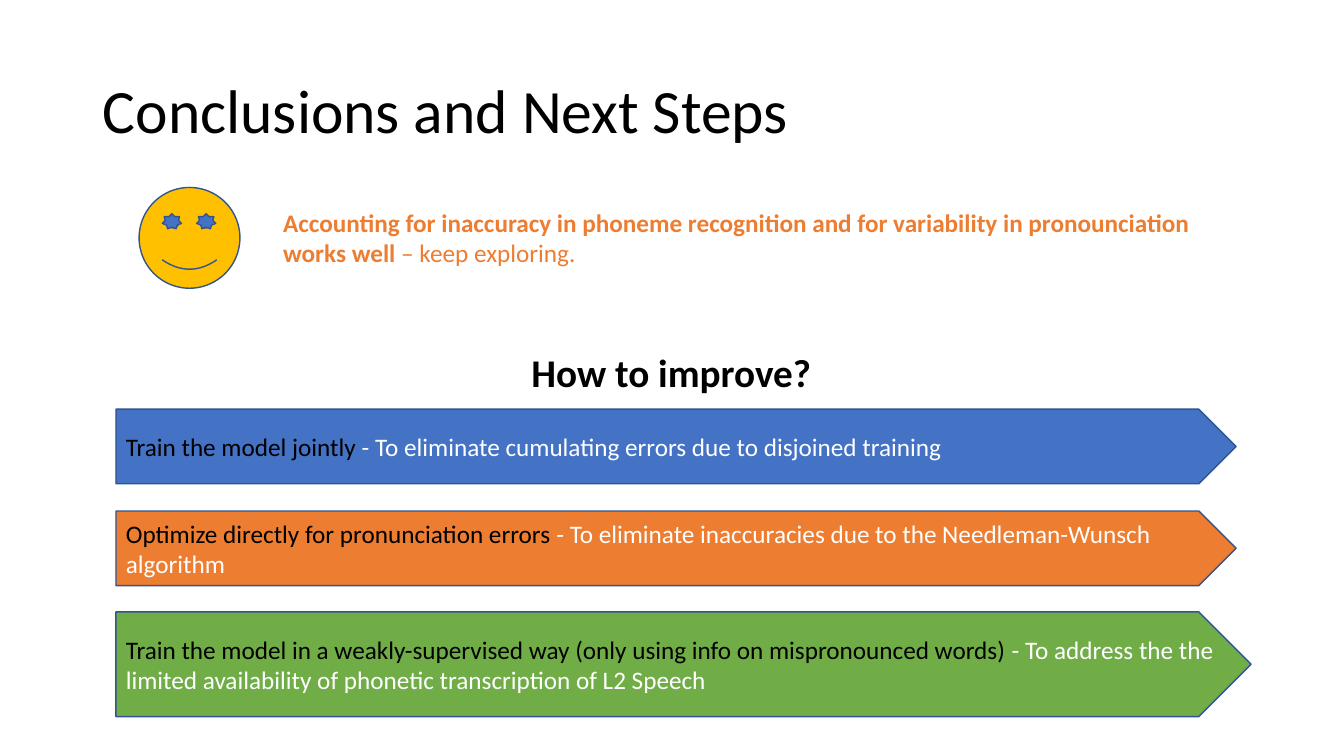
from dataclasses import dataclass

from lxml.etree import SubElement
from pptx import Presentation
from pptx.dml.color import RGBColor as Rgb
from pptx.enum.shapes import MSO_SHAPE as Kind
from pptx.enum.text import MSO_ANCHOR as Anchor, MSO_AUTO_SIZE as Fit, PP_ALIGN as Align
from pptx.oxml.ns import qn
from pptx.shapes.autoshape import Shape
from pptx.slide import Slide
from pptx.text.text import TextFrame
from pptx.util import Inches, Pt


@dataclass(frozen=True)
class Theme:
    font: str = "Calibri"
    title: int = 44
    head: int = 28
    text: int = 18
    black: str = "000000"
    white: str = "FFFFFF"
    blue: str = "4472C4"
    orange: str = "ED7D31"
    green: str = "70AD47"
    gold: str = "FFC000"
    edge: str = "325491"


@dataclass(frozen=True)
class Box:
    left: float
    top: float
    width: float
    height: float

    def place(self) -> tuple:
        return tuple(map(Inches, (self.left, self.top, self.width, self.height)))


@dataclass(frozen=True)
class Step:
    box: Box
    fill: str
    lead: str
    goal: str


THEME = Theme()
STEPS = (
    Step(Box(1.15, 4.06, 11.11, 0.74), THEME.blue,
         "Train the model jointly ",
         "- To eliminate cumulating errors due to disjoined training"),
    Step(Box(1.15, 5.07, 11.11, 0.74), THEME.orange,
         "Optimize directly for pronunciation errors ",
         "- To eliminate inaccuracies due to the Needleman-Wunsch algorithm"),
    Step(Box(1.15, 6.07, 11.26, 1.04), THEME.green,
         "Train the model in a weakly-supervised way "
         "(only using info on mispronounced words) ",
         "- To address the the limited availability of phonetic transcription of L2 Speech"),
)


def write(frame: TextFrame, parts: tuple[str, ...], size: int, color: str,
          anchor: Anchor = Anchor.TOP) -> list:
    """Fill a frame with one left-aligned paragraph and return its runs."""
    frame.word_wrap = True
    frame.auto_size = Fit.NONE
    frame.vertical_anchor = anchor
    para = frame.paragraphs[0]
    para.alignment = Align.LEFT
    para.font.name = THEME.font
    para.font.size = Pt(size)
    para.font.color.rgb = Rgb.from_string(color)
    runs = []
    for part in parts:
        run = para.add_run()
        run.text = part
        runs.append(run)
    return runs


def draw(slide: Slide, kind: Kind, box: Box, fill: str) -> Shape:
    shape = slide.shapes.add_shape(kind, *box.place())
    shape.shadow.inherit = False
    shape.fill.solid()
    shape.fill.fore_color.rgb = Rgb.from_string(fill)
    shape.line.color.rgb = Rgb.from_string(THEME.edge)
    shape.line.width = Pt(1)
    return shape


def seat(shape: Shape, box: Box) -> None:
    shape.left, shape.top, shape.width, shape.height = box.place()


def add_step(slide: Slide, step: Step) -> None:
    shape = draw(slide, Kind.PENTAGON, step.box, step.fill)
    lead, goal = write(shape.text_frame, (step.lead, step.goal),
                       THEME.text, THEME.black, Anchor.MIDDLE)
    lead.font.color.rgb = Rgb.from_string(THEME.black)
    goal.font.color.rgb = Rgb.from_string(THEME.white)


def main() -> None:
    deck = Presentation()
    deck.slide_width, deck.slide_height = Inches(13.33), Inches(7.5)
    slide = deck.slides.add_slide(deck.slide_layouts[1])

    # Title
    title = slide.shapes.title
    seat(title, Box(0.92, 0.4, 11.5, 1.45))
    write(title.text_frame, ("Conclusions and Next Steps",),
          THEME.title, THEME.black, Anchor.MIDDLE)
    title.text_frame.paragraphs[0].line_spacing = 0.9

    # Heading above the steps, without a bullet
    head = slide.placeholders[1]
    seat(head, Box(5.17, 3.46, 3.25, 0.58))
    write(head.text_frame, ("How to improve?",), THEME.head, THEME.black)
    para = head.text_frame.paragraphs[0]
    para.font.bold = True
    para.line_spacing = 0.9
    para.space_before = Pt(10)
    props = para._p.get_or_add_pPr()
    props.set("marL", "0")
    props.set("indent", "0")
    none = SubElement(props, qn("a:buNone"))
    props.find(qn("a:defRPr")).addprevious(none)

    # Smiley with star eyes
    draw(slide, Kind.SMILEY_FACE, Box(1.38, 1.86, 1, 1), THEME.gold)
    for left in (1.61, 1.95):
        draw(slide, Kind.STAR_7_POINT, Box(left, 2.12, 0.19, 0.15), THEME.blue)

    # Main finding
    note = slide.shapes.add_textbox(*Box(2.71, 2.01, 9.25, 0.71).place())
    claim, _ = write(note.text_frame, (
        "Accounting for inaccuracy in phoneme recognition and for variability "
        "in pronounciation works well ", "– keep exploring."),
        THEME.text, THEME.orange)
    claim.font.bold = True

    # Next steps
    for step in STEPS:
        add_step(slide, step)

    deck.save("out.pptx")


if __name__ == "__main__":
    main()
